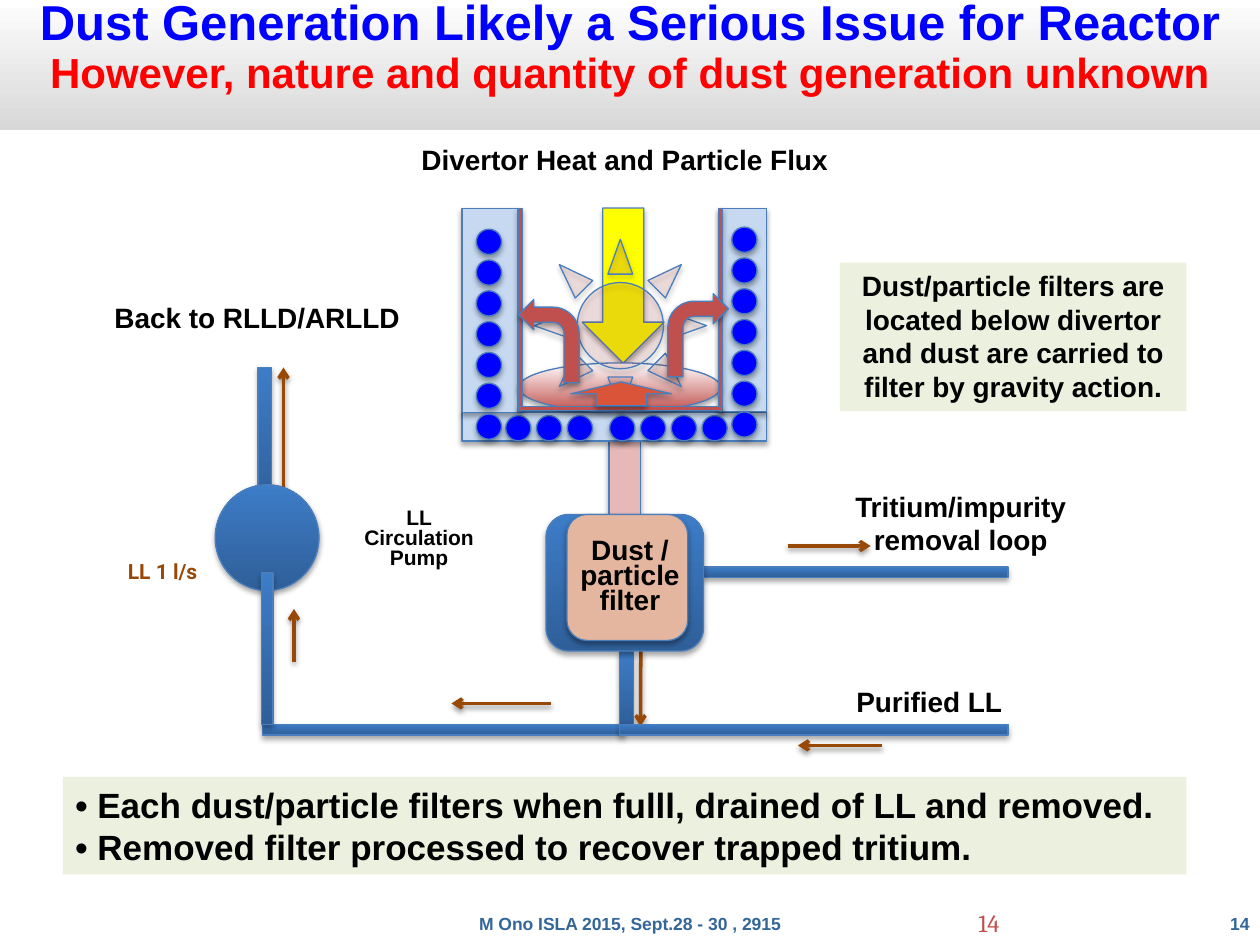
from lxml import etree
from pptx import Presentation
from pptx import util as u
from pptx.dml import color
from pptx.enum import shapes, text
from pptx.oxml import ns

COLORS = {
    "black": "000000", "blue": "0000FF", "red": "FF0000", "brick": "C0504D",
    "steel": "336699", "outline": "4B7EBC", "pipe_dark": "2F5F99",
    "pipe_light": "3D7CC7", "wall": "C6D9F1", "yellow": "FFFF00",
    "brown": "984807", "pink": "E6B9B8", "peach": "E4B59F",
    "orange": "D95438", "white": "FFFFFF", "note": "EBF1DE",
    "band_top": "FBFBFB", "band_bottom": "D8D8D8",
}
PIPE = ("pipe_dark", "pipe_light")
KIND = shapes.MSO_SHAPE
ALIGN = text.PP_ALIGN


def rgb(name):
    return color.RGBColor.from_string(COLORS[name])


def child(parent, tag, **attributes):
    return etree.SubElement(parent, ns.qn(tag), attributes)


class Diagram:
    font = "Arial"

    def __init__(self, deck):
        self.page = deck.slides.add_slide(deck.slide_layouts[6])

    def shadow(self, effects, opacity):
        outer = child(effects, "a:outerShdw", blurRad=str(u.Pt(3.1)),
                      dist=str(u.Pt(1.8)), dir="5400000", rotWithShape="0")
        black = child(outer, "a:srgbClr", val=COLORS["black"])
        child(black, "a:alpha", val=str(opacity * 1000))

    def shape(self, kind, left, top, width, height, fill, angle=90, alpha=None,
              outlined=True, rotation=0, flipped=False):
        """Fill is a colour name, or a pair of names for a gradient."""
        box = self.page.shapes.add_shape(
            kind, u.Pt(left), u.Pt(top), u.Pt(width), u.Pt(height))
        box.rotation = rotation
        if isinstance(fill, tuple):
            box.fill.gradient()
            box.fill.gradient_angle = angle
            for stop, name in zip(box.fill.gradient_stops, fill):
                stop.color.rgb = rgb(name)
        else:
            box.fill.solid()
            box.fill.fore_color.rgb = rgb(fill)
        properties = box.element.spPr
        if alpha:
            solid = properties.find(ns.qn("a:solidFill"))
            child(solid[0], "a:alpha", val=str(alpha * 1000))
        if flipped:
            properties.find(ns.qn("a:xfrm")).set("flipH", "1")
        box.shadow.inherit = False
        if outlined:
            box.line.color.rgb = rgb("outline")
            box.line.width = u.Pt(0.75)
            self.shadow(properties.find(ns.qn("a:effectLst")), 35)
        else:
            box.line.fill.background()
        return box

    def arrow(self, x1, y1, x2, y2):
        line = self.page.shapes.add_connector(
            shapes.MSO_CONNECTOR.STRAIGHT, u.Pt(x1), u.Pt(y1), u.Pt(x2), u.Pt(y2))
        line.line.color.rgb = rgb("brown")
        line.line.width = u.Pt(2)
        properties = line.element.spPr
        child(properties.find(ns.qn("a:ln")), "a:tailEnd", type="arrow")
        self.shadow(child(properties, "a:effectLst"), 38)

    def fill_text(self, box, lines, size=16, ink="black", font=None, bold=True,
                  align=ALIGN.CENTER, spacing=None, inset=7.2):
        frame = box.text_frame
        frame.word_wrap = True
        frame.vertical_anchor = text.MSO_ANCHOR.TOP
        frame.margin_left = frame.margin_right = u.Pt(inset)
        frame.margin_top = frame.margin_bottom = u.Pt(3.6)
        for index, words in enumerate(lines):
            para = frame.paragraphs[0] if index == 0 else frame.add_paragraph()
            para.alignment = align
            if spacing:
                para.line_spacing = u.Pt(spacing)
            span = para.add_run()
            span.text = words
            span.font.size = u.Pt(size)
            span.font.name = font or self.font
            span.font.bold = bold
            span.font.color.rgb = rgb(ink)
        return frame

    def label(self, left, top, width, height, lines, **style):
        box = self.page.shapes.add_textbox(
            u.Pt(left), u.Pt(top), u.Pt(width), u.Pt(height))
        self.fill_text(box, lines, **style)

    def panel(self, left, top, width, height, lines, **style):
        box = self.shape(KIND.RECTANGLE, left, top, width, height, "note",
                         outlined=False)
        self.fill_text(box, lines, **style)

    def pipe(self, left, top, width, height):
        self.shape(KIND.RECTANGLE, left, top, width, height, PIPE)

    def coolant(self, left, top, count, across=False):
        """Evenly spaced row or column of coolant channels."""
        for index in range(count):
            shift = index * 17.6
            self.shape(KIND.OVAL, left + shift * across,
                       top + shift * (not across), 14.4, 14.4, "blue")


def main():
    deck = Presentation()
    deck.slide_width, deck.slide_height = u.Pt(720), u.Pt(540)
    art = Diagram(deck)

    # Footer
    footer = dict(size=10, ink="steel", inset=0)
    art.label(666, 518.4, 48, 19.4, ["14"], align=ALIGN.RIGHT, **footer)
    art.label(72, 518.4, 576, 19.4, ["M Ono ISLA 2015, Sept.28 - 30 , 2915"], **footer)
    art.label(552, 515.5, 168, 28.8, ["14"], size=14, ink="brick",
              font="Cambria", bold=False, align=ALIGN.LEFT)

    # Title band
    band = art.shape(KIND.RECTANGLE, 0, 4.3, 720, 70, ("band_top", "band_bottom"),
                     angle=270, outlined=False)
    frame = art.fill_text(band, ["Dust Generation Likely a Serious Issue for Reactor",
                                 "However, nature and quantity of dust generation unknown"],
                          size=28, ink="blue", spacing=20.8)
    frame.paragraphs[0].space_after = u.Pt(6)
    subtitle = frame.paragraphs[1].runs[0]
    subtitle.font.size = u.Pt(24)
    subtitle.font.color.rgb = rgb("red")

    # Filter outlet, removal loop and return line
    art.pipe(354, 372, 8, 43)
    art.arrow(366.2, 372, 366, 415)
    art.label(192, 288, 95, 48, ["LL", "Circulation", "Pump"], size=12, spacing=11.4)
    art.pipe(402, 324, 174, 6)
    art.pipe(150, 414, 206.5, 6)
    art.arrow(450, 312, 497.5, 312)
    art.arrow(315, 402, 258, 402)
    art.label(222, 78, 270, 26.6, ["Divertor Heat and Particle Flux"])

    # Circulation pump and riser
    art.pipe(147.5, 210, 7.5, 83)
    art.arrow(162, 283, 162, 210)
    art.shape(KIND.OVAL, 123, 277, 59.3, 60.5, PIPE)
    art.pipe(149.5, 327.5, 6.5, 86.5)
    art.arrow(168, 378, 168, 348)
    art.label(66, 315.5, 81.5, 21.6, ["LL 1 l/s"], size=12, ink="brown",
              font="Roboto", align=ALIGN.LEFT)
    art.pipe(354, 414, 222, 6)
    art.arrow(504, 426, 456, 426)
    art.label(48, 168, 198, 26.6, ["Back to RLLD/ARLLD"])

    # Dust filter
    art.shape(KIND.RECTANGLE, 348, 252, 18, 48, "pink")
    art.shape(KIND.ROUNDED_RECTANGLE, 312, 294, 90, 78, PIPE)
    art.shape(KIND.ROUNDED_RECTANGLE, 324, 294, 69, 72, "peach")
    art.label(318, 306, 84, 51, ["Dust / particle", "filter"], spacing=14.2)

    # Divertor walls, heat flux and plasma glow
    for wall in ((264, 235.5, 174, 16.5), (264, 119.2, 32, 116.4),
                 (411, 119, 27.2, 116.4)):
        art.shape(KIND.RECTANGLE, *wall, "wall")
    art.shape(KIND.RIGHT_ARROW, 311.8, 139.8, 88.6, 46.8, "yellow", rotation=90)
    art.shape(KIND.OVAL, 296.6, 207.4, 115.2, 28, ("brick", "white"))
    art.shape(KIND.SUN, 305.2, 136.8, 98.6, 98.6, "brick", alpha=15)

    # Coolant channels
    art.coolant(272.2, 131, 7)
    art.coolant(418.2, 129.8, 7)
    art.coolant(289, 237.5, 3, across=True)
    art.coolant(348.4, 237.5, 4, across=True)

    # Liquid lining and particle arrows
    for lining in ((296, 119.2, 2.6, 116), (410.4, 119, 2.2, 116),
                   (296.2, 232.2, 116, 2.6)):
        art.shape(KIND.RECTANGLE, *lining, "brick")
    art.shape(KIND.UP_ARROW, 326.2, 218.2, 57.6, 13.7, "orange")
    art.shape(KIND.BENT_ARROW, 381.6, 167.8, 34.6, 47.5, "brick")
    art.shape(KIND.BENT_ARROW, 296.4, 171.2, 34.6, 47.5, "brick", flipped=True)

    # Labels and notes
    art.label(450, 276, 198, 46, ["Tritium/impurity removal loop"])
    art.label(432, 387.5, 198, 26.6, ["Purified LL"])
    art.panel(480, 150, 198, 85, [
        "Dust/particle filters are located below divertor and dust are "
        "carried to filter by gravity action."])
    art.panel(36, 444, 642, 55.7, [
        "• Each dust/particle filters when fulll, drained of LL and removed.",
        "• Removed filter processed to recover trapped tritium."],
        size=20, align=ALIGN.LEFT)

    deck.save("out.pptx")


if __name__ == "__main__":
    main()
